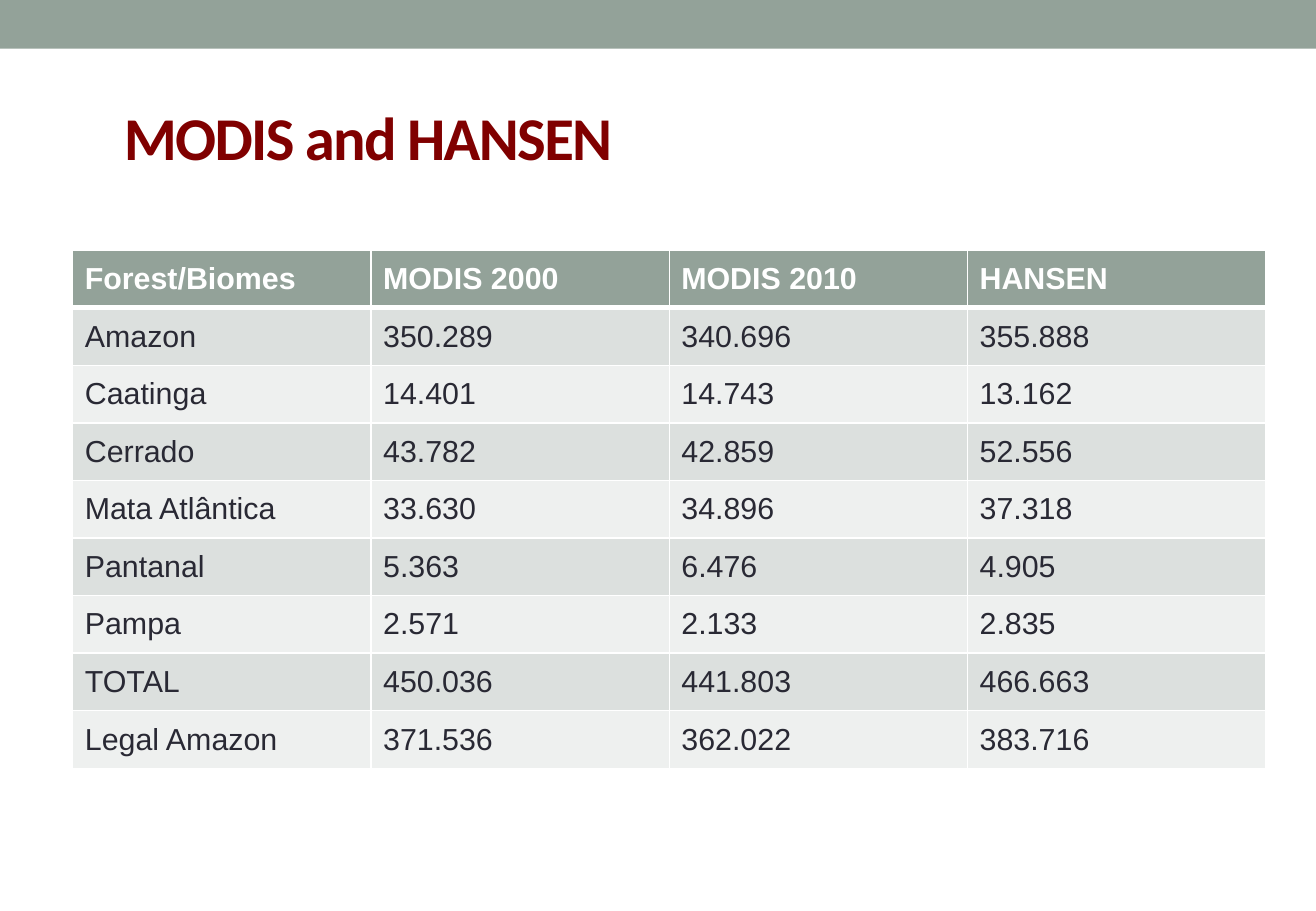
"""Build a slide with a table of forest area by biome from MODIS and HANSEN."""
from dataclasses import dataclass

from lxml.etree import SubElement
from pptx import Presentation
from pptx.dml.color import RGBColor
from pptx.enum.shapes import MSO_SHAPE
from pptx.enum.text import MSO_ANCHOR
from pptx.oxml.ns import qn
from pptx.util import Cm, Pt


@dataclass(frozen=True)
class Theme:
    sage: str = "93A299"
    dark: str = "DCE0DE"
    light: str = "EEF0EF"
    ink: str = "292934"
    white: str = "FFFFFF"
    wine: str = "800000"
    head: str = "Calibri"
    body: str = "Arial"
    big: int = 36
    small: int = 18
    thin: int = 1
    thick: int = 3


theme = Theme()


def write(frame, text, color, form):
    """Put text in a frame and format its run."""
    run = frame.paragraphs[0].add_run()
    run.text = text
    run.font.color.rgb = RGBColor.from_string(color)
    for key, value in form.items():
        setattr(run.font, key, value)
    return run


def edge(cell, side, width):
    """Draw a white border on one side of a cell."""
    line = SubElement(cell._tc.get_or_add_tcPr(), qn(f"a:ln{side}"), w=str(Pt(width)))
    fill = SubElement(line, qn("a:solidFill"))
    SubElement(fill, qn("a:srgbClr"), val=theme.white)


deck = Presentation()
deck.slide_width, deck.slide_height = Cm(27.51), Cm(19.05)
slide = deck.slides.add_slide(deck.slide_layouts[6])

band = slide.shapes.add_shape(MSO_SHAPE.RECTANGLE, 0, 0, deck.slide_width, Cm(1.02))
band.shadow.inherit = False
band.fill.solid()
band.fill.fore_color.rgb = RGBColor.from_string(theme.sage)
band.line.fill.background()

rows = [
    ("Forest/Biomes", "MODIS 2000", "MODIS 2010", "HANSEN"),
    ("Amazon", "350.289", "340.696", "355.888"),
    ("Caatinga", "14.401", "14.743", "13.162"),
    ("Cerrado", "43.782", "42.859", "52.556"),
    ("Mata Atlântica", "33.630", "34.896", "37.318"),
    ("Pantanal", "5.363", "6.476", "4.905"),
    ("Pampa", "2.571", "2.133", "2.835"),
    ("TOTAL", "450.036", "441.803", "466.663"),
    ("Legal Amazon", "371.536", "362.022", "383.716"),
]
grid = slide.shapes.add_table(
    len(rows), len(rows[0]), Cm(1.52), Cm(5.23), Cm(24.94), Cm(10.84)
).table
for r, row in enumerate(rows):
    top = r == 0
    shade = theme.sage if top else theme.dark if r % 2 else theme.light
    color = theme.white if top else theme.ink
    form = {"name": theme.body, "size": Pt(theme.small), "bold": top}
    for c, text in enumerate(row):
        cell = grid.cell(r, c)
        cell.vertical_anchor = MSO_ANCHOR.MIDDLE
        for side in "LRTB":
            heavy = (r, side) in ((0, "B"), (1, "T"))
            edge(cell, side, theme.thick if heavy else theme.thin)
        cell.fill.solid()
        cell.fill.fore_color.rgb = RGBColor.from_string(shade)
        write(cell.text_frame, text, color, form)

title = slide.shapes.add_textbox(Cm(2.34), Cm(1.47), Cm(22.86), Cm(2.74)).text_frame
for key, value in {"word_wrap": True, "vertical_anchor": MSO_ANCHOR.MIDDLE}.items():
    setattr(title, key, value)
form = {"name": theme.head, "size": Pt(theme.big), "bold": True}
run = write(title, "MODIS and HANSEN", theme.wine, form)
run.font._element.set("spc", "-100")

deck.save("out.pptx")
